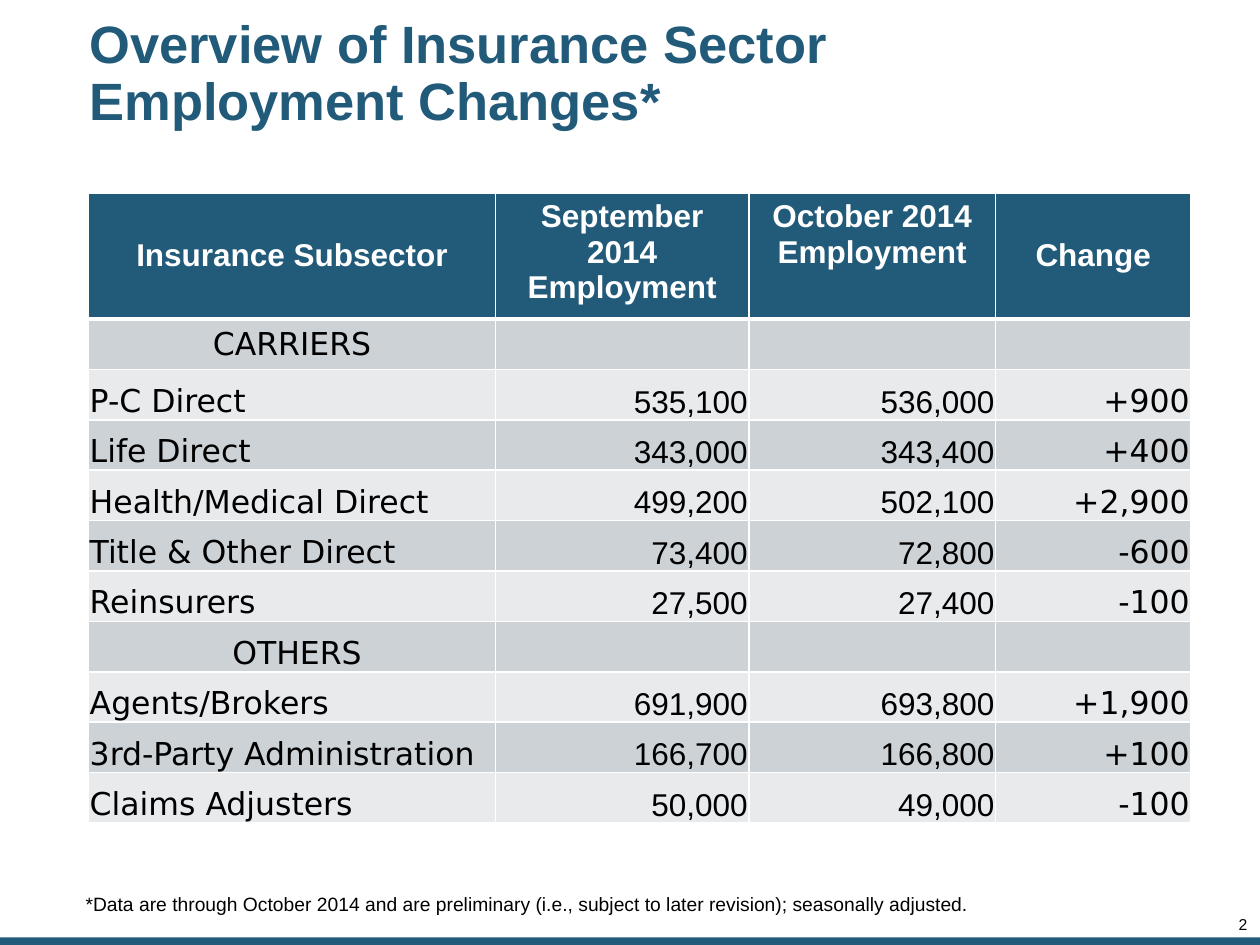
"""Build a slide with a table of insurance sector employment changes."""
from lxml import etree
from pptx import Presentation
from pptx.dml.color import RGBColor
from pptx.enum.shapes import MSO_SHAPE
from pptx.enum.text import MSO_ANCHOR, MSO_AUTO_SIZE, PP_ALIGN
from pptx.oxml.ns import qn
from pptx.util import Pt

RECT = MSO_SHAPE.RECTANGLE
TOP, MIDDLE, BOTTOM = MSO_ANCHOR.TOP, MSO_ANCHOR.MIDDLE, MSO_ANCHOR.BOTTOM
LEFT, CENTER, RIGHT = PP_ALIGN.LEFT, PP_ALIGN.CENTER, PP_ALIGN.RIGHT
NO_FIT = MSO_AUTO_SIZE.NONE

HEX = {"blue": "225A7A", "dark": "CDD2D7", "light": "E8EAEC",
       "white": "FFFFFF", "black": "000000"}
SANS, WIDE = "Arial", "DejaVu Sans"
WIDTHS = [232.6, 144.7, 141.1, 111.6]
HEAD_H, ROW_H = 71.4, 28.8
HEADS = [("Insurance Subsector", MIDDLE), ("September 2014\nEmployment", TOP),
         ("October 2014\nEmployment", TOP), ("Change", MIDDLE)]
ROWS = [
    ["CARRIERS"],
    ["P-C Direct", "535,100", "536,000", "+900"],
    ["Life Direct", "343,000", "343,400", "+400"],
    ["Health/Medical Direct", "499,200", "502,100", "+2,900"],
    ["Title & Other Direct", "73,400", "72,800", "-600"],
    ["Reinsurers", "27,500", "27,400", "-100"],
    [" OTHERS"],
    ["Agents/Brokers", "691,900", "693,800", "+1,900"],
    ["3rd-Party Administration", "166,700", "166,800", "+100"],
    ["Claims Adjusters", "50,000", "49,000", "-100"],
]


def color(name):
    return RGBColor.from_string(HEX[name])


def write(frame, text, size, tint, face=SANS, bold=False, align=LEFT, space=1.0):
    frame.text = text
    for para in frame.paragraphs:
        para.alignment = align
        para.line_spacing = space
        para.space_before = Pt(0)
        font = para.font
        font.size, font.name, font.bold = Pt(size), face, bold
        font.color.rgb = color(tint)


def inset(item, left, top, right, bottom):
    item.margin_left, item.margin_top = Pt(left), Pt(top)
    item.margin_right, item.margin_bottom = Pt(right), Pt(bottom)


def add_title(slide, text):
    title = slide.shapes.title
    title.left, title.top = Pt(47.5), Pt(18)
    title.width, title.height = Pt(558), Pt(49.7)
    frame = title.text_frame
    frame.word_wrap, frame.auto_size = True, NO_FIT
    frame.vertical_anchor = MIDDLE
    inset(frame, 3.6, 3.6, 3.6, 3.6)
    write(frame, text, 30, "blue", bold=True, space=0.9)


def add_bar(slide):
    bar = slide.shapes.add_shape(RECT, Pt(0), Pt(535.7), Pt(720), Pt(4.3))
    bar.shadow.inherit = False
    bar.fill.solid()
    bar.fill.fore_color.rgb = color("blue")
    bar.line.fill.background()


def add_text(slide, box, text, size, pad, **style):
    frame = slide.shapes.add_textbox(*map(Pt, box)).text_frame
    frame.word_wrap = True
    inset(frame, *pad)
    write(frame, text, size, "black", **style)


def paint(cell, fill, base):
    props = cell._tc.get_or_add_tcPr()
    for side, width in zip("LRTB", (1, 1, 1, base)):
        line = etree.SubElement(props, qn(f"a:ln{side}"), w=str(Pt(width)))
        solid = etree.SubElement(line, qn("a:solidFill"))
        etree.SubElement(solid, qn("a:srgbClr"), val=HEX["white"])
    cell.fill.solid()
    cell.fill.fore_color.rgb = color(fill)


def add_table(slide):
    count = len(ROWS) + 1
    table = slide.shapes.add_table(
        count, len(WIDTHS), Pt(50.6), Pt(110.2), Pt(sum(WIDTHS)),
        Pt(HEAD_H + ROW_H * len(ROWS))).table
    for col, width in zip(table.columns, WIDTHS):
        col.width = Pt(width)
    for num, row in enumerate(table.rows):
        row.height = Pt(ROW_H if num else HEAD_H)
        fill = ("light", "dark")[num % 2] if num else "blue"
        for cell in row.cells:
            paint(cell, fill, 1 if num else 3)
    for col, (text, anchor) in enumerate(HEADS):
        cell = table.cell(0, col)
        cell.vertical_anchor = anchor
        inset(cell, 7.2, 3.6, 7.2, 3.6)
        write(cell.text_frame, text, 18, "white", bold=True, align=CENTER)
    for num, row in enumerate(ROWS, 1):
        for col, text in enumerate(row):
            cell = table.cell(num, col)
            cell.vertical_anchor = MIDDLE if num == 1 else BOTTOM
            inset(cell, 0.7, 0.7, 0.7, 0)
            align = CENTER if len(row) == 1 else RIGHT if col else LEFT
            face = SANS if col in (1, 2) else WIDE
            write(cell.text_frame, text, 18, "black", face, align=align)


def main():
    deck = Presentation()
    deck.slide_width, deck.slide_height = Pt(720), Pt(540)
    slide = deck.slides.add_slide(deck.slide_layouts[5])
    add_bar(slide)
    add_text(slide, (677.5, 524.2, 35.3, 9.4), "2", 9, (0, 0, 0, 0),
             align=RIGHT, space=0.85)
    add_title(slide, "Overview of Insurance Sector Employment Changes*")
    add_text(slide, (41.8, 506.2, 650.9, 20.2),
             "*Data are through October 2014 and are preliminary "
             "(i.e., subject to later revision); seasonally adjusted.",
             11, (7.2, 3.6, 7.2, 3.6))
    add_table(slide)
    deck.save("out.pptx")


if __name__ == "__main__":
    main()
